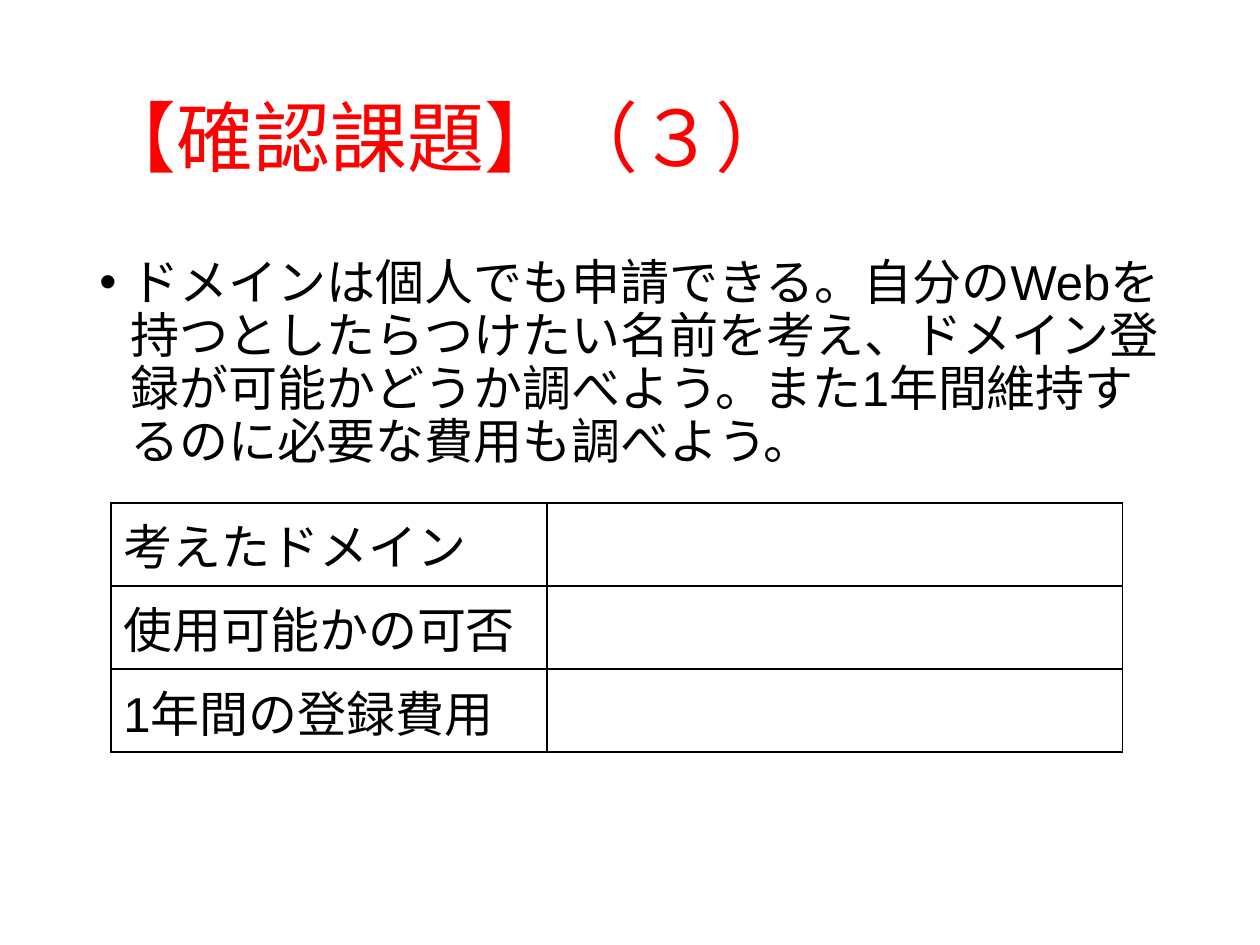
from dataclasses import dataclass

from lxml import etree
from pptx import Presentation
from pptx.dml.color import RGBColor
from pptx.enum import text
from pptx.oxml import ns
from pptx.util import Inches, Pt


@dataclass(frozen=True)
class Theme:
    font: str = "Arial"
    red: str = "FF0000"
    black: str = "000000"
    head: int = 44
    body: int = 28
    rule: float = 1


@dataclass(frozen=True)
class Box:
    left: float
    top: float
    width: float
    height: float

    def place(self) -> tuple:
        return tuple(map(Inches, (self.left, self.top, self.width, self.height)))


THEME = Theme()
ROWS = ["考えたドメイン", "使用可能かの可否", "1年間の登録費用"]
COLS = [3.46, 4.57]
ROW_H = 0.66


def style(para, size: int, color: str) -> None:
    para.font.name = THEME.font
    para.font.size = Pt(size)
    para.font.color.rgb = RGBColor.from_string(color)


def add_text(slide, box: Box, words: str, size: int, color: str, anchor):
    frame = slide.shapes.add_textbox(*box.place()).text_frame
    frame.word_wrap = True
    frame.vertical_anchor = anchor
    para = frame.paragraphs[0]
    para.text = words
    para.line_spacing = 0.9
    style(para, size, color)
    return para


def add_bullet(para, indent: float) -> None:
    props = para._p.get_or_add_pPr()
    props.set("marL", str(Inches(indent)))
    props.set("indent", str(-Inches(indent)))
    font = etree.SubElement(props, ns.qn("a:buFont"))
    font.set("typeface", THEME.font)
    etree.SubElement(props, ns.qn("a:buChar")).set("char", "•")


def add_border(cell) -> None:
    props = cell._tc.get_or_add_tcPr()
    for side in ("lnL", "lnR", "lnT", "lnB"):
        line = etree.SubElement(props, ns.qn(f"a:{side}"), w=str(Pt(THEME.rule)))
        fill = etree.SubElement(line, ns.qn("a:solidFill"))
        etree.SubElement(fill, ns.qn("a:srgbClr"), val=THEME.black)


def add_grid(slide, left: float, top: float) -> None:
    box = Box(left, top, sum(COLS), ROW_H * len(ROWS))
    table = slide.shapes.add_table(len(ROWS), len(COLS), *box.place()).table
    table.first_row = table.horz_banding = False
    for col, width in zip(table.columns, COLS):
        col.width = Inches(width)
    for row, label in zip(table.rows, ROWS):
        row.height = Inches(ROW_H)
        for cell, words in zip(row.cells, (label, "")):
            cell.text = words
            style(cell.text_frame.paragraphs[0], THEME.body, THEME.black)
            add_border(cell)
            cell.fill.background()


def main() -> None:
    deck = Presentation()
    deck.slide_width, deck.slide_height = Inches(10), Inches(7.5)
    slide = deck.slides.add_slide(deck.slide_layouts[6])

    # Title
    add_text(slide, Box(0.69, 0.4, 8.62, 1.45), "【確認課題】（３）",
             THEME.head, THEME.red, text.MSO_ANCHOR.MIDDLE)

    # Task
    task = add_text(
        slide, Box(0.69, 2, 8.62, 1.85),
        "ドメインは個人でも申請できる。自分のWebを持つとしたらつけたい名前を考え、"
        "ドメイン登録が可能かどうか調べよう。また1年間維持するのに必要な費用も調べよう。",
        THEME.body, THEME.black, text.MSO_ANCHOR.TOP)
    task.space_before = Pt(10)
    add_bullet(task, 0.25)

    # Answer table
    add_grid(slide, 0.88, 3.99)

    deck.save("out.pptx")


if __name__ == "__main__":
    main()
